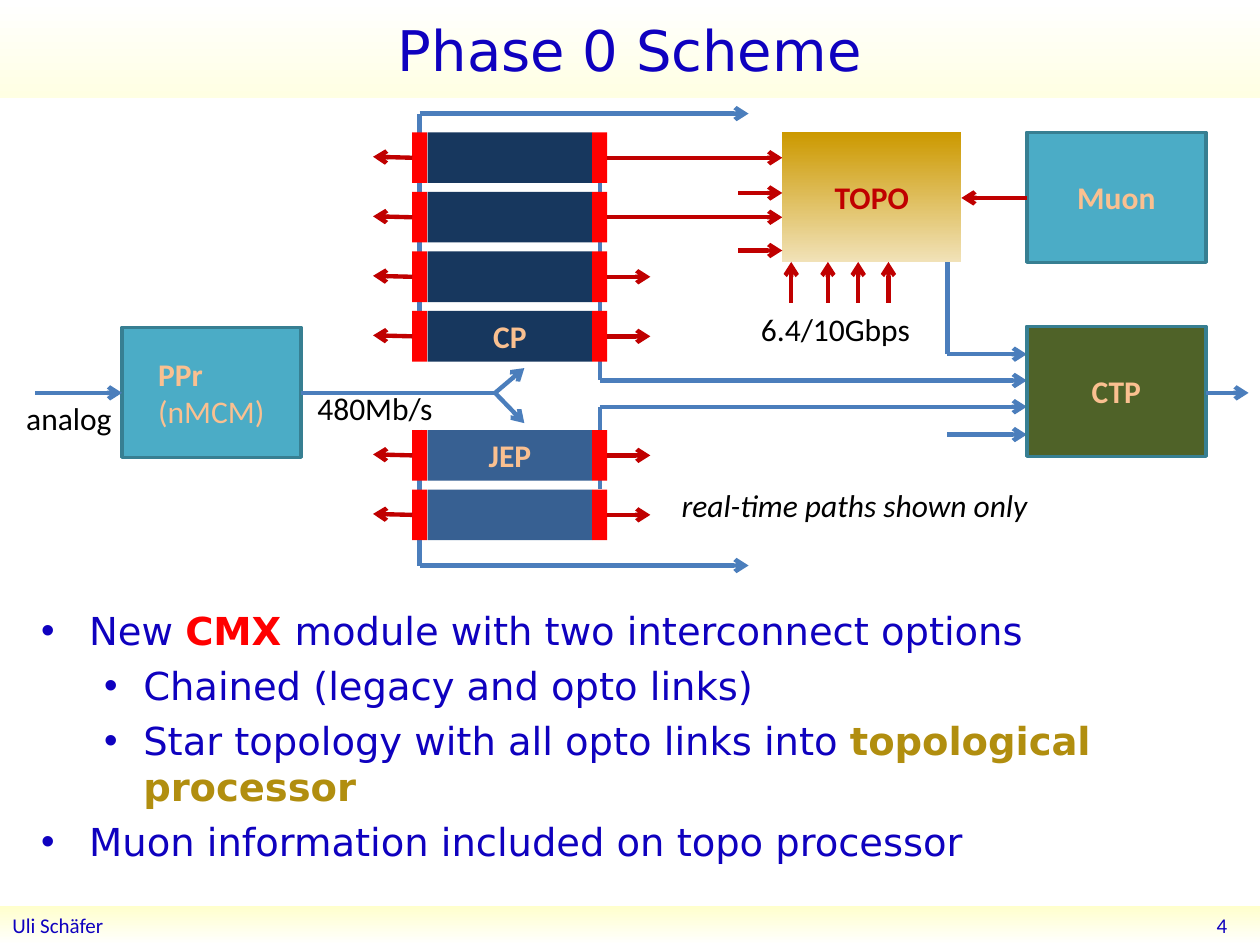
from lxml import etree
from pptx import Presentation
from pptx import util as u
from pptx.dml.color import RGBColor
from pptx.enum import shapes, text
from pptx.oxml.ns import qn

BLUE, RED, NAVY = "4B7EBC", "C00000", "0F01BF"
TEAL, PEACH, EDGE = "4BACC6", "FAC090", "377F92"
LEFT_BUS, RIGHT_BUS = 8.46, 12.09
TOP_BUS, BOTTOM_BUS, INPUT_Y = 2.29, 11.4, 7.92
TOPO_X, CTP_X, ROW_TOP, ROW_PITCH, ROW_HEIGHT = 15.77, 20.7, 2.67, 1.2, 1.02
BOX_WIDTH, BOX_HEIGHT = 3.61, 2.62
MODULES = [(0, "17375E", ""), (1, "17375E", ""), (2, "17375E", ""),
           (3, "17375E", "CP"), (5, "376092", "JEP"), (6, "376092", "")]


def color(value):
    return RGBColor.from_string(value)


def format_runs(paragraph, size, font_color, name="Calibri", bold=False, italic=False):
    for run in paragraph.runs:
        font = run.font
        font.size, font.name, font.bold, font.italic = u.Pt(size), name, bold, italic
        font.color.rgb = color(font_color)


def set_gradient(shape, start, end):
    shape.fill.gradient()
    shape.fill.gradient_angle = 270
    for stop, value in zip(shape.fill.gradient_stops, (start, end)):
        stop.color.rgb = color(value)


def add_box(slide, left, top, width, height, fill, label="", font_color=PEACH, edge=None):
    shape = slide.shapes.add_shape(shapes.MSO_SHAPE.RECTANGLE, u.Cm(left), u.Cm(top),
                                   u.Cm(width), u.Cm(height))
    shape.shadow.inherit = False
    if isinstance(fill, tuple):
        set_gradient(shape, *fill)
    else:
        shape.fill.solid()
        shape.fill.fore_color.rgb = color(fill)
    if edge:
        shape.line.color.rgb = color(edge)
        shape.line.width = u.Pt(2)
    else:
        shape.line.fill.background()
    if label:
        frame = shape.text_frame
        frame.text = label
        frame.vertical_anchor = text.MSO_ANCHOR.MIDDLE
        frame.paragraphs[0].alignment = text.PP_ALIGN.CENTER
        format_runs(frame.paragraphs[0], 18, font_color, bold=True)
    return shape


def add_line(slide, start, end, line_color=BLUE, arrow=True):
    points = [u.Cm(value) for value in (*start, *end)]
    connector = slide.shapes.add_connector(shapes.MSO_CONNECTOR.STRAIGHT, *points)
    connector.line.color.rgb = color(line_color)
    connector.line.width = u.Pt(2.5)
    if arrow:
        line = connector.line._get_or_add_ln()
        etree.SubElement(line, qn("a:tailEnd"), type="arrow")
    etree.SubElement(connector._element.spPr, qn("a:effectLst"))


def add_label(slide, left, top, width, label, size=18, font_color="000000",
              italic=False, alignment=text.PP_ALIGN.LEFT):
    box = slide.shapes.add_textbox(u.Cm(left), u.Cm(top), u.Cm(width), u.Cm(1.02))
    frame = box.text_frame
    frame.word_wrap = True
    frame.text = label
    frame.paragraphs[0].alignment = alignment
    format_runs(frame.paragraphs[0], size, font_color, italic=italic)
    return box


def add_title(slide):
    title = slide.shapes.title
    title.left, title.top, title.width, title.height = u.Cm(0), u.Cm(0), u.Cm(25.4), u.Cm(1.98)
    set_gradient(title, "FFFFFF", "FFFFE3")
    title.text_frame.text = "Phase 0 Scheme"
    title.text_frame.vertical_anchor = text.MSO_ANCHOR.MIDDLE
    paragraph = title.text_frame.paragraphs[0]
    paragraph.alignment = text.PP_ALIGN.CENTER
    format_runs(paragraph, 32, NAVY, "DejaVu Sans")


def add_footer(slide):
    footer = add_box(slide, 0, 18.26, 25.4, 0.79, ("FFFFCC", "FFFFFF"), "Uli Schäfer")
    footer.text_frame.paragraphs[0].alignment = text.PP_ALIGN.LEFT
    format_runs(footer.text_frame.paragraphs[0], 12, NAVY)
    number = add_label(slide, 19.63, 18.24, 5.36, "4", 12, NAVY, alignment=text.PP_ALIGN.RIGHT)
    number.height = u.Cm(0.81)
    number.text_frame.vertical_anchor = text.MSO_ANCHOR.MIDDLE


def add_buses(slide):
    for x, top, bottom in [(LEFT_BUS, TOP_BUS, 6.5), (LEFT_BUS, 8.66, BOTTOM_BUS),
                           (RIGHT_BUS, 3.45, 7.67), (RIGHT_BUS, 8.2, 9.86),
                           (19.1, 5.28, 7.14)]:
        add_line(slide, (x, top), (x, bottom), arrow=False)
    for y in (TOP_BUS, BOTTOM_BUS):
        add_line(slide, (LEFT_BUS, y), (15.09, y))
    for x, y in [(19.1, 7.14), (RIGHT_BUS, 7.67), (RIGHT_BUS, 8.2), (19.1, 8.76)]:
        add_line(slide, (x, y), (CTP_X, y))


def add_modules(slide):
    for slot, fill, label in MODULES:
        top = ROW_TOP + slot * ROW_PITCH
        middle = top + ROW_HEIGHT / 2
        add_box(slide, 8.62, top, 3.32, ROW_HEIGHT, fill, label)
        for left in (8.31, 11.94):
            add_box(slide, left, top, 0.3, ROW_HEIGHT, "FF0000")
        add_line(slide, (8.31, middle), (7.52, middle - 0.02), RED)
        add_line(slide, (12.24, middle), (TOPO_X if slot < 2 else 13.11, middle), RED)


def add_processors(slide):
    ppr = add_box(slide, 2.46, 6.6, BOX_WIDTH, BOX_HEIGHT, TEAL, "PPr\n(nMCM)", edge=EDGE)
    ppr.text_frame.margin_left = u.Cm(0.73)
    for paragraph, bold in zip(ppr.text_frame.paragraphs, (True, False)):
        paragraph.alignment = text.PP_ALIGN.LEFT
        format_runs(paragraph, 18, PEACH, bold=bold)
    add_box(slide, CTP_X, 6.58, BOX_WIDTH, BOX_HEIGHT, "4F6228", "CTP", edge=EDGE)
    add_box(slide, CTP_X, ROW_TOP, BOX_WIDTH, BOX_HEIGHT, TEAL, "Muon", edge=EDGE)
    add_box(slide, TOPO_X, ROW_TOP, BOX_WIDTH, BOX_HEIGHT, ("CC9900", "F1E2B8"), "TOPO", RED)


def add_links(slide):
    add_line(slide, (0.71, INPUT_Y), (2.46, INPUT_Y))
    add_line(slide, (24.31, INPUT_Y), (25.17, INPUT_Y))
    add_line(slide, (6.07, INPUT_Y), (9.98, INPUT_Y), arrow=False)
    for y in (7.42, 8.53):
        add_line(slide, (9.98, INPUT_Y), (10.57, y))
    for y in (3.89, 5.05):
        add_line(slide, (14.88, y), (TOPO_X, y), RED)
    for x in (15.95, 16.69, 17.3, 17.91):
        add_line(slide, (x, 6.1), (x, 5.28), RED)
    add_line(slide, (CTP_X, 3.99), (19.38, 3.99), RED)


def add_bullets(slide):
    bullets = [
        (0, [("New ", NAVY, False), ("CMX ", "FF0000", True),
             ("module with two interconnect options", NAVY, False)]),
        (1, [("Chained (legacy and opto links)", NAVY, False)]),
        (1, [("Star topology with all opto links into ", NAVY, False),
             ("topological processor", "B18E0F", True)]),
        (0, [("Muon information included on topo processor", NAVY, False)]),
    ]
    box = slide.shapes.add_textbox(u.Cm(0.58), u.Cm(12.12), u.Cm(24.21), u.Cm(5.94))
    frame = box.text_frame
    frame.word_wrap = True
    for index, (level, pieces) in enumerate(bullets):
        paragraph = frame.add_paragraph() if index else frame.paragraphs[0]
        paragraph.level = level
        paragraph.space_before = u.Pt(5)
        for content, font_color, bold in pieces:
            run = paragraph.add_run()
            run.text = content
            run.font.size, run.font.name, run.font.bold = u.Pt(22), "DejaVu Sans", bold
            run.font.color.rgb = color(font_color)
        margin, indent = [(0.97, -0.97), (2.06, -0.79)][level]
        properties = paragraph._p.get_or_add_pPr()
        properties.set("marL", str(u.Cm(margin)))
        properties.set("indent", str(u.Cm(indent)))
        etree.SubElement(properties, qn("a:buFont"), typeface="Arial")
        etree.SubElement(properties, qn("a:buChar"), char="•")


def main():
    presentation = Presentation()
    presentation.slide_width, presentation.slide_height = u.Cm(25.4), u.Cm(19.05)
    slide = presentation.slides.add_slide(presentation.slide_layouts[5])
    add_title(slide)
    add_footer(slide)
    add_buses(slide)
    add_modules(slide)
    add_processors(slide)
    add_links(slide)
    add_label(slide, 0.28, 7.92, 2.59, "analog")
    add_label(slide, 6.15, 7.72, 2.84, "480Mb/s")
    add_label(slide, 15.09, 6.12, 3.61, "6.4/10Gbps")
    add_label(slide, 13.49, 9.68, 8, "real-time paths shown only", italic=True)
    add_bullets(slide)
    presentation.save("out.pptx")


if __name__ == "__main__":
    main()
